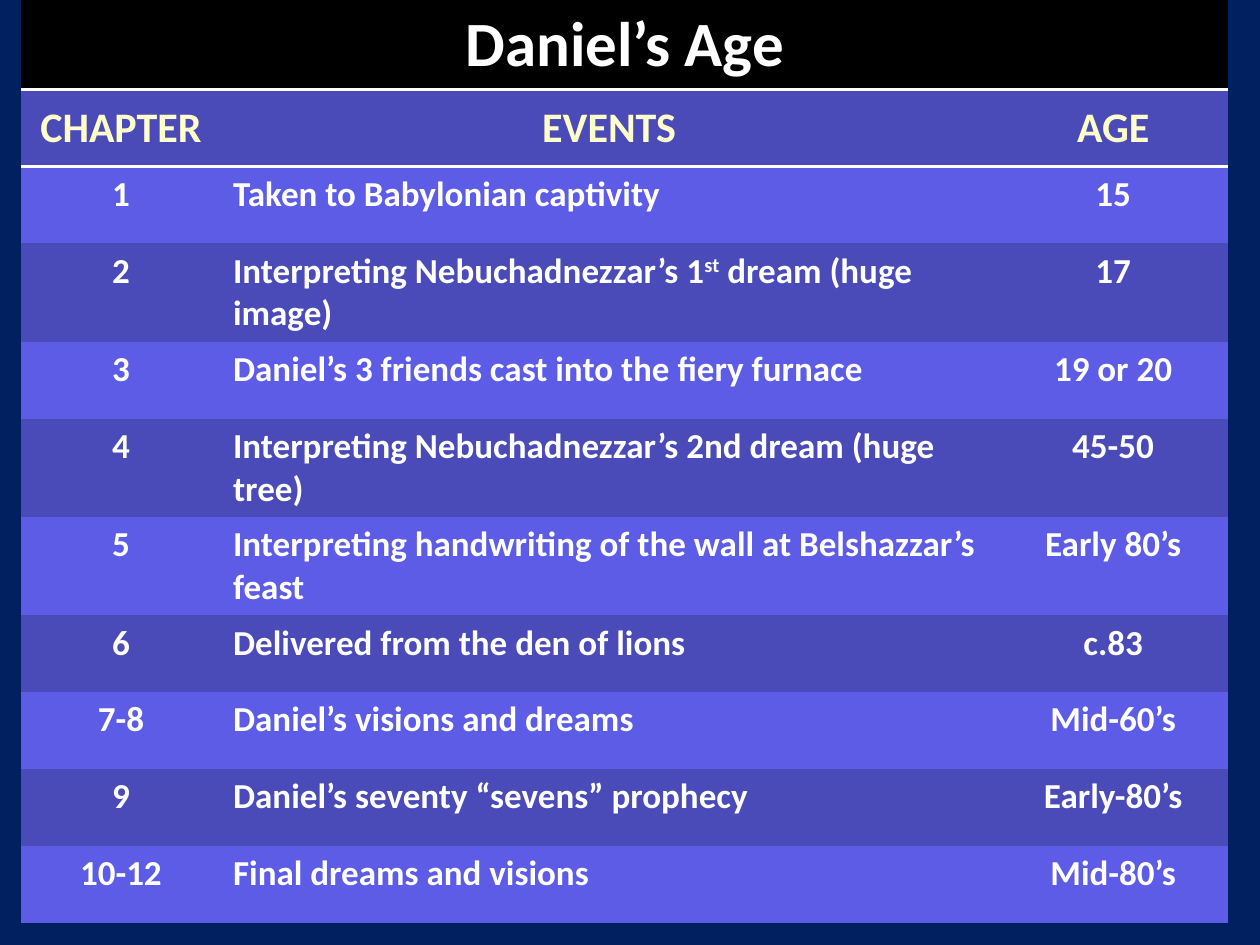
from dataclasses import dataclass
from lxml.etree import SubElement as Sub
from pptx import Presentation
from pptx.dml.color import RGBColor as RGB
from pptx.enum.text import MSO_ANCHOR as Anchor, PP_ALIGN as Align
from pptx.oxml.ns import qn
from pptx.util import Inches, Pt


@dataclass(frozen=True)
class Theme:
    font: str = "Calibri"
    back: str = "002060"
    black: str = "000000"
    white: str = "FFFFFF"
    cream: str = "FFFFCC"
    dark: str = "4A4AB9"
    light: str = "5C5CE7"
    title: int = 36
    head: int = 24
    body: int = 20
    rule: int = 2
    plain: str = "{2D5ABB26-0587-4C30-8999-92F81FD0307C}"


T = Theme()
COLS = (1.58, 6.17, 1.83)
LOW, TALL, TOP = 0.61, 0.75, 0.68
TALL_ROWS = ("2", "4", "5")
HEADS = ("CHAPTER", "EVENTS", "AGE")
LIFE = (
    ("1", "Taken to Babylonian captivity", "15"),
    ("2", ("Interpreting Nebuchadnezzar’s 1", "st", " dream (huge image)"), "17"),
    ("3", "Daniel’s 3 friends cast into the fiery furnace", "19 or 20"),
    ("4", "Interpreting Nebuchadnezzar’s 2nd dream (huge tree)", "45-50"),
    ("5", "Interpreting handwriting of the wall at Belshazzar’s feast", "Early 80’s"),
    ("6", "Delivered from the den of lions", "c.83"),
    ("7-8", "Daniel’s visions and dreams", "Mid-60’s"),
    ("9", "Daniel’s seventy “sevens” prophecy", "Early-80’s"),
    ("10-12", "Final dreams and visions", "Mid-80’s"),
)


def write(cell, text, size=T.body, color=T.white, align=Align.CENTER,
          anchor=Anchor.TOP):
    cell.vertical_anchor = anchor
    para = cell.text_frame.paragraphs[0]
    para.alignment = align
    parts = (text,) if isinstance(text, str) else text
    for i, part in enumerate(parts):
        run = para.add_run()
        run.text = part
        font = run.font
        font.name, font.size, font.bold = T.font, Pt(size), True
        font.color.rgb = RGB.from_string(color)
        if i % 2:
            font._element.set("baseline", "30000")


def paint(cell, color):
    cell.fill.solid()
    cell.fill.fore_color.rgb = RGB.from_string(color)


def rule(cell, side):
    props = cell._tc.get_or_add_tcPr()
    line = Sub(props, qn(f"a:{side}"), w=str(Pt(T.rule)))
    Sub(Sub(line, qn("a:solidFill")), qn("a:srgbClr"), val=T.white)
    props.insert(0, line)


def age_table(slide, left, top, width, height):
    frame = slide.shapes.add_table(
        len(LIFE) + 2, len(COLS), Inches(left), Inches(top),
        Inches(width), Inches(height))
    table = frame.table
    table._tbl.tblPr.find(qn("a:tableStyleId")).text = T.plain
    table.first_row = table.horz_banding = False
    for col, size in zip(table.columns, COLS):
        col.width = Inches(width * size / sum(COLS))
    highs = [TOP, LOW] + [TALL if row[0] in TALL_ROWS else LOW for row in LIFE]
    for row, high in zip(table.rows, highs):
        row.height = Inches(high)

    title = table.cell(0, 0)
    title.merge(table.cell(0, len(COLS) - 1))
    write(title, "Daniel’s Age", size=T.title)
    for c, head in enumerate(HEADS):
        paint(table.cell(0, c), T.black)
        rule(table.cell(0, c), "lnB")
        cell = table.cell(1, c)
        paint(cell, T.dark)
        rule(cell, "lnT")
        write(cell, head, size=T.head, color=T.cream, anchor=Anchor.MIDDLE)

    for r, row in enumerate(LIFE):
        for c, text in enumerate(row):
            cell = table.cell(r + 2, c)
            paint(cell, T.dark if r % 2 else T.light)
            write(cell, text, align=Align.LEFT if c == 1 else Align.CENTER)


def main():
    deck = Presentation()
    deck.slide_width, deck.slide_height = Inches(10), Inches(7.5)
    slide = deck.slides.add_slide(deck.slide_layouts[6])
    fill = slide.background.fill
    fill.solid()
    fill.fore_color.rgb = RGB.from_string(T.back)
    age_table(slide, 0.17, 0, 9.58, 7.24)
    deck.save("out.pptx")


if __name__ == "__main__":
    main()
